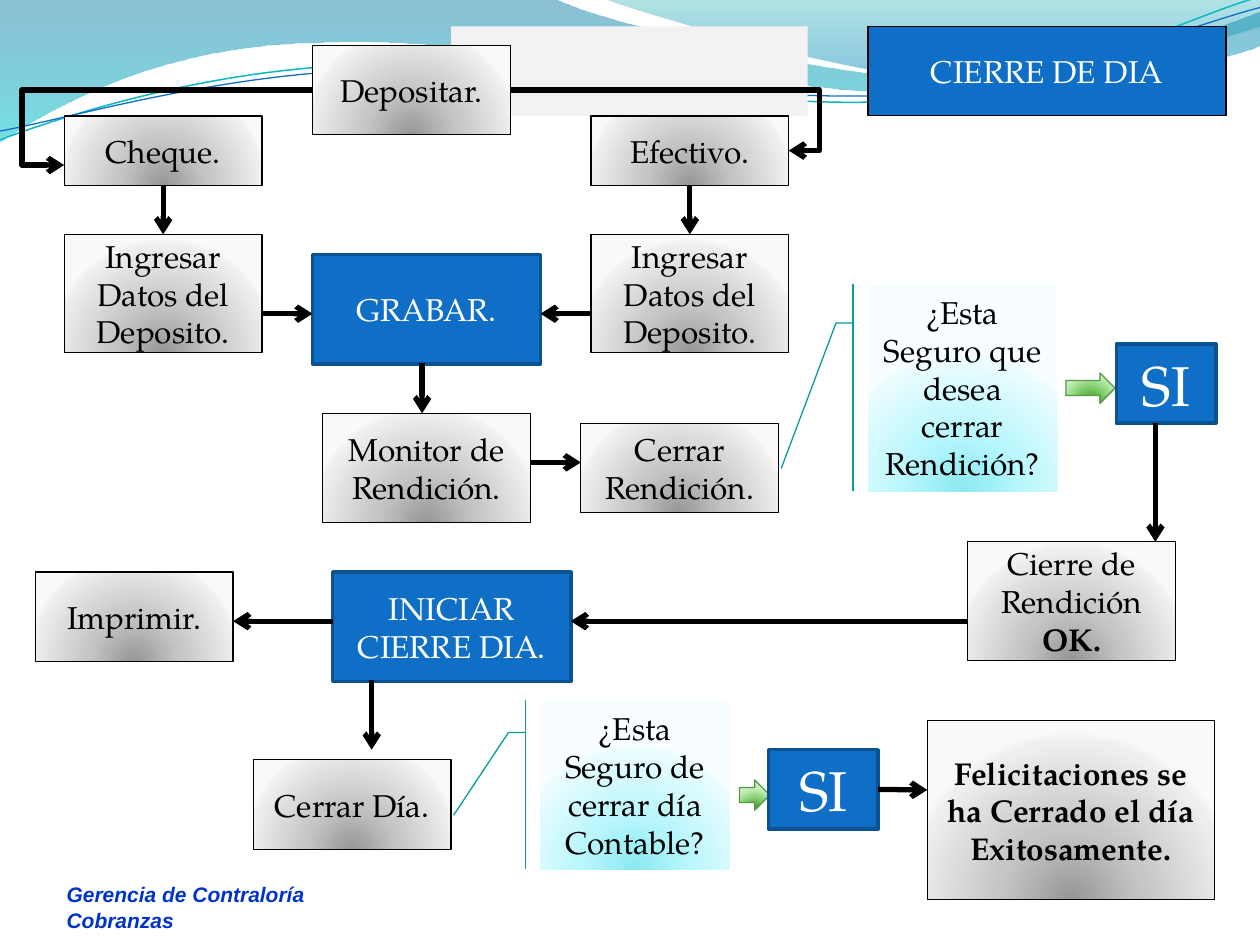
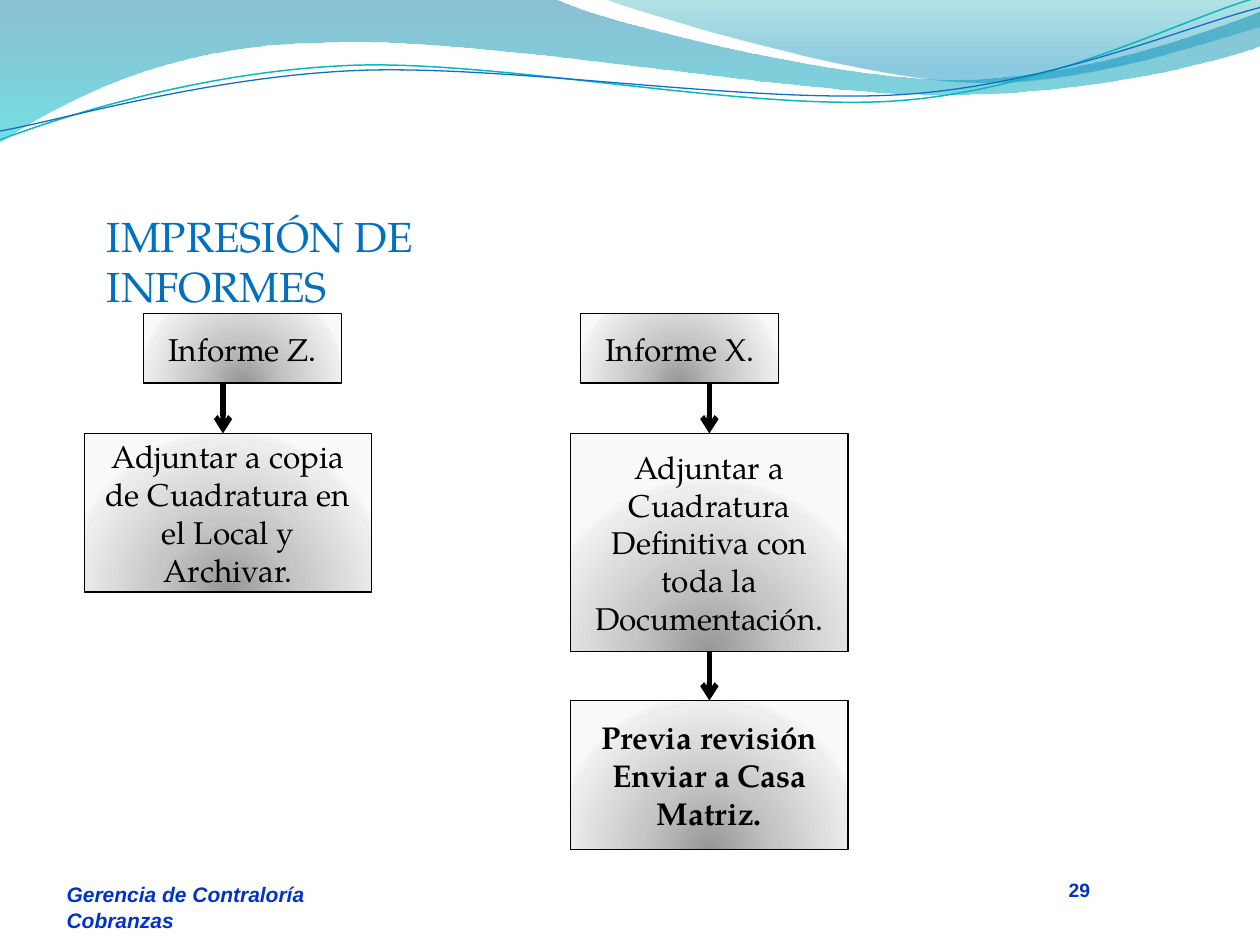
from lxml import etree
from pptx import Presentation
from pptx.dml.color import RGBColor
from pptx.enum.shapes import MSO_CONNECTOR as LINK, MSO_SHAPE as SHAPE
from pptx.enum.text import MSO_ANCHOR as ANCHOR, PP_ALIGN as ALIGN
from pptx.oxml import parse_xml
from pptx.oxml.ns import nsdecls, qn
from pptx.util import Inches, Pt

SERIF, SANS = "TeX Gyre Pagella", "Arial"
BLACK, WHITE, BLUE, FOOTER_BLUE = "000000", "FFFFFF", "0F6FC6", "0033CC"

# Gradient stops: position %, colour, opacity %
GREY = [(0, "979797", 100), (43, "C6C6C6", 100), (93, "EEEEEE", 100), (100, "F9F9F9", 100)]
AQUA = [(0, "8BE9F1", 100), (43, "B9F7FD", 100), (93, "EAFCFE", 100), (100, "F8FEFF", 100)]
GREEN = [(0, "319811", 100), (68, "95D882", 100), (100, "C6EFBD", 100)]

# style: preset, fill, line colour, line width, text colour
STYLES = {
    "step": (SHAPE.RECTANGLE, GREY, BLACK, 0.75, BLACK),
    "key": (SHAPE.RECTANGLE, BLUE, "0B5292", 2, WHITE),
    "title": (SHAPE.RECTANGLE, BLUE, BLACK, 0.75, WHITE),
    "blank": (SHAPE.RECTANGLE, "F2F2F2", None, 0, BLACK),
    "question": (SHAPE.LINE_CALLOUT_2_ACCENT_BAR, AQUA, "069CA3", 0.75, BLACK),
    "go": (SHAPE.RIGHT_ARROW, GREEN, "5B9747", 0.75, BLACK),
}

# Wave outlines: a pair is a straight step, six numbers are a Bezier curve
WAVES = [
    ([(0, -0.01), (4.4, -0.01), (4.76, 0.17, 6.64, 0.63, 7.58, 0.63),
      (8.53, 0.63, 9.58, 0.26, 10, 0.09), (10.01, 0.36),
      (9.83, 0.44, 8.7, 0.76, 7.46, 0.75), (6.22, 0.75, 3.82, 0.28, 2.57, 0.34),
      (1.29, 0.35, 0.46, 0.83, -0.01, 1.13)],
     [(0, "0074A1", 45), (100, "00C6CF", 55)], None, 0),
    ([(4.79, -0.01), (5.09, 0.11, 6.82, 0.62, 7.69, 0.65),
      (8.56, 0.69, 9.61, 0.32, 10, 0.21), (10, 0)],
     [(0, "00A1A9", 30), (80, "008BBF", 45)], None, 0),
    ([(0, 1.11), (0.48, 0.93, 1.58, 0.57, 2.77, 0.52),
      (3.95, 0.47, 5.93, 0.89, 7.13, 0.8), (8.33, 0.71, 9.38, 0.15, 9.98, -0.02)],
     None, "0AB8BF", 0.85),
    ([(0, 1.04), (0.47, 0.96, 1.64, 0.61, 2.83, 0.56),
      (4.03, 0.51, 5.97, 0.83, 7.17, 0.75), (8.36, 0.67, 9.41, 0.21, 10, 0.06)],
     None, BLUE, 0.75),
]

FOOTER = ["Gerencia de Contraloría", "Cobranzas"]
DEPOSIT = "Ingresar Datos del Deposito."

# Boxes: style, (left, top, width, height), runs (text, bold), size, callout end (y, x)
# Arrows: from, to and, for a bent one, how far the bend lies along the way
SLIDES = [
    {
        "boxes": [
            ("blank", (3.58, 0.21, 2.83, 0.71)),
            ("title", (6.89, 0.21, 2.84, 0.71), [("CIERRE DE DIA", False)]),
            ("step", (2.48, 0.36, 1.57, 0.71), [("Depositar.", False)]),
            ("step", (0.51, 0.92, 1.57, 0.55), [("Cheque.", False)]),
            ("step", (4.69, 0.92, 1.57, 0.55), [("Efectivo.", False)]),
            ("step", (0.51, 1.86, 1.57, 0.94), [(DEPOSIT, False)]),
            ("step", (4.69, 1.86, 1.57, 0.94), [(DEPOSIT, False)]),
            ("key", (2.48, 2.02, 1.81, 0.87), [("GRABAR.", False)]),
            ("step", (2.56, 3.28, 1.65, 0.87), [("Monitor de Rendición.", False)]),
            ("step", (4.61, 3.36, 1.57, 0.71), [("Cerrar Rendición.", False)]),
            ("question", (6.89, 2.25, 1.5, 1.65),
             [("¿Esta Seguro que desea cerrar Rendición?", False)], 18, (0.89, -0.46)),
            ("go", (8.46, 2.96, 0.39, 0.24)),
            ("key", (8.86, 2.73, 0.79, 0.63), [("SI", False)], 32),
            ("step", (7.68, 4.3, 1.65, 0.94), [("Cierre de Rendición ", False), ("OK.", True)]),
            ("key", (2.64, 4.54, 1.89, 0.87), [("INICIAR CIERRE DIA.", False)]),
            ("step", (0.28, 4.54, 1.57, 0.71), [("Imprimir.", False)]),
            ("step", (2.01, 6.03, 1.57, 0.71), [("Cerrar Día.", False)]),
            ("question", (4.29, 5.56, 1.5, 1.34),
             [("¿Esta Seguro de cerrar día Contable?", False)], 18, (0.68, -0.46)),
            ("go", (5.87, 6.19, 0.24, 0.24)),
            ("key", (6.1, 5.95, 0.87, 0.63), [("SI", False)], 32),
            ("step", (7.36, 5.72, 2.28, 1.42),
             [("Felicitaciones se ha Cerrado el día Exitosamente.", True)]),
        ],
        "arrows": [
            ((2.48, 0.72), (0.51, 1.31), 1.17),
            ((4.05, 0.72), (6.26, 1.19), 1.11),
            ((1.3, 1.47), (1.3, 1.86)),
            ((5.47, 1.47), (5.47, 1.86)),
            ((2.09, 2.49), (2.48, 2.49)),
            ((4.69, 2.49), (4.29, 2.49)),
            ((3.35, 2.88), (3.35, 3.28)),
            ((4.21, 3.67), (4.61, 3.67)),
            ((9.17, 3.36), (9.17, 4.3)),
            ((7.68, 4.93), (4.53, 4.93)),
            ((2.64, 4.93), (1.85, 4.93)),
            ((2.95, 5.4), (2.95, 5.95)),
            ((6.97, 6.27), (7.36, 6.27)),
        ],
    },
    {
        "heading": "IMPRESIÓN DE INFORMES",
        "number": "29",
        "boxes": [
            ("step", (1.14, 2.49, 1.57, 0.55), [("Informe Z.", False)]),
            ("step", (4.61, 2.49, 1.57, 0.55), [("Informe X.", False)]),
            ("step", (0.67, 3.44, 2.28, 1.26),
             [("Adjuntar a copia de Cuadratura en el Local y Archivar.", False)]),
            ("step", (4.53, 3.44, 2.2, 1.73),
             [("Adjuntar a Cuadratura Definitiva con toda la Documentación.", False)]),
            ("step", (4.53, 5.56, 2.2, 1.18), [("Previa revisión Enviar a Casa Matriz.", True)]),
        ],
        "arrows": [
            ((1.77, 3.04), (1.77, 3.44)),
            ((5.63, 3.04), (5.63, 3.44)),
            ((5.63, 5.17), (5.63, 5.56)),
        ],
    },
]


def rgb(color):
    return RGBColor.from_string(color)


def paint(s, fill, radial=True):
    """Fill with a colour, a list of gradient stops, or nothing."""
    if fill is None:
        s.fill.background()
        return
    s.fill.solid()
    if isinstance(fill, str):
        s.fill.fore_color.rgb = rgb(fill)
        return
    stops = "".join(
        f'<a:gs pos="{pos * 1000}"><a:srgbClr val="{color}">'
        f'<a:alpha val="{alpha * 1000}"/></a:srgbClr></a:gs>' for pos, color, alpha in fill)
    way = ('<a:path path="circle"><a:fillToRect l="50000" t="130000" r="50000" b="-30000"/></a:path>'
           if radial else '<a:lin ang="5400000" scaled="0"/>')
    grad = parse_xml(f'<a:gradFill {nsdecls("a")} rotWithShape="1">'
                     f'<a:gsLst>{stops}</a:gsLst>{way}</a:gradFill>')
    props = s._element.spPr
    props.replace(props.find(qn("a:solidFill")), grad)


def outline(s, color, width):
    if color is None:
        s.line.fill.background()
    else:
        s.line.color.rgb = rgb(color)
        s.line.width = Pt(width)


def add_run(p, text, size, font, color, bold=False, italic=False):
    r = p.add_run()
    r.text = text
    r.font.size, r.font.name = Pt(size), font
    r.font.bold, r.font.italic = bold, italic
    r.font.color.rgb = rgb(color)


def add_label(slide, place, lines, *look, align=ALIGN.LEFT):
    tf = slide.shapes.add_textbox(*map(Inches, place)).text_frame
    tf.word_wrap = True
    for i, line in enumerate(lines):
        p = tf.add_paragraph() if i else tf.paragraphs[0]
        p.alignment = align
        add_run(p, line, *look)


def bend_steps(s, steps):
    """Turn the straight steps that have control points into Bezier curves."""
    for line, step in zip(list(s._element.iter(qn("a:lnTo"))), steps):
        if len(step) == 2:
            continue
        curve = etree.Element(qn("a:cubicBezTo"))
        for x, y in zip(step[::2], step[1::2]):
            etree.SubElement(curve, qn("a:pt"), x=str(Inches(x) - s.left),
                             y=str(Inches(y) - s.top))
        line.getparent().replace(line, curve)


def add_waves(slide):
    for (start, *steps), fill, color, width in WAVES:
        builder = slide.shapes.build_freeform(*map(Inches, start))
        ends = [tuple(map(Inches, step[-2:])) for step in steps]
        builder.add_line_segments(ends, close=False)
        s = builder.convert_to_shape()
        bend_steps(s, steps)
        s.shadow.inherit = False
        paint(s, fill, radial=False)
        outline(s, color, width)


def add_box(slide, style, place, runs=(), size=18, callout_end=None):
    preset, fill, line, width, color = STYLES[style]
    s = slide.shapes.add_shape(preset, *map(Inches, place))
    s.shadow.inherit = False
    paint(s, fill)
    outline(s, line, width)
    if callout_end:
        for i, value in enumerate((0.19, -0.08, 0.19, -0.17, *callout_end)):
            s.adjustments[i] = value
    tf = s.text_frame
    tf.word_wrap = True
    tf.vertical_anchor = ANCHOR.MIDDLE
    p = tf.paragraphs[0]
    p.alignment = ALIGN.CENTER
    for text, bold in runs:
        add_run(p, text, size, SERIF, color, bold)
    return s


def find_site(boxes, point):
    """Return the box and side whose middle lies at the point."""
    x, y = map(Inches, point)
    for s in boxes:
        mid_x, mid_y = s.left + s.width / 2, s.top + s.height / 2
        sides = ((mid_x, s.top), (s.left, mid_y), (mid_x, s.top + s.height),
                 (s.left + s.width, mid_y))
        for site, (sx, sy) in enumerate(sides):
            if max(abs(sx - x), abs(sy - y)) < Inches(0.02):
                return s, site
    return None


def add_arrow(slide, boxes, start, end, bend=None):
    kind = LINK.ELBOW if bend else LINK.STRAIGHT
    s = slide.shapes.add_connector(kind, *map(Inches, start + end))
    for point, connect in ((start, s.begin_connect), (end, s.end_connect)):
        found = find_site(boxes, point)
        if found:
            connect(*found)
    if bend:
        guides = s._element.spPr.find(qn("a:prstGeom")).get_or_add_avLst()
        etree.SubElement(guides, qn("a:gd"), name="adj1", fmla=f"val {round(bend * 100000)}")
    outline(s, BLACK, 3)
    etree.SubElement(s.line._get_or_add_ln(), qn("a:tailEnd"), type="arrow")
    etree.SubElement(s._element.spPr, qn("a:effectLst"))


def add_slide(prs, content):
    slide = prs.slides.add_slide(prs.slide_layouts[6])
    add_waves(slide)
    add_label(slide, (0.43, 6.95, 4.38, 0.58), FOOTER, 12, SANS, FOOTER_BLUE, True, True)
    if "number" in content:
        add_label(slide, (8.08, 6.92, 0.67, 0.29), [content["number"]],
                  11, SANS, FOOTER_BLUE, True, align=ALIGN.RIGHT)
    boxes = [add_box(slide, *box) for box in content["boxes"]]
    rectangles = [s for s in boxes if s.auto_shape_type == SHAPE.RECTANGLE]
    for arrow in content["arrows"]:
        add_arrow(slide, rectangles, *arrow)
    if "heading" in content:
        add_label(slide, (0.75, 1.62, 4.34, 0.51), [content["heading"]], 24, SERIF, "0070C0")


def main():
    prs = Presentation()
    prs.slide_width, prs.slide_height = Inches(10), Inches(7.5)
    for content in SLIDES:
        add_slide(prs, content)
    prs.save("out.pptx")


if __name__ == "__main__":
    main()
